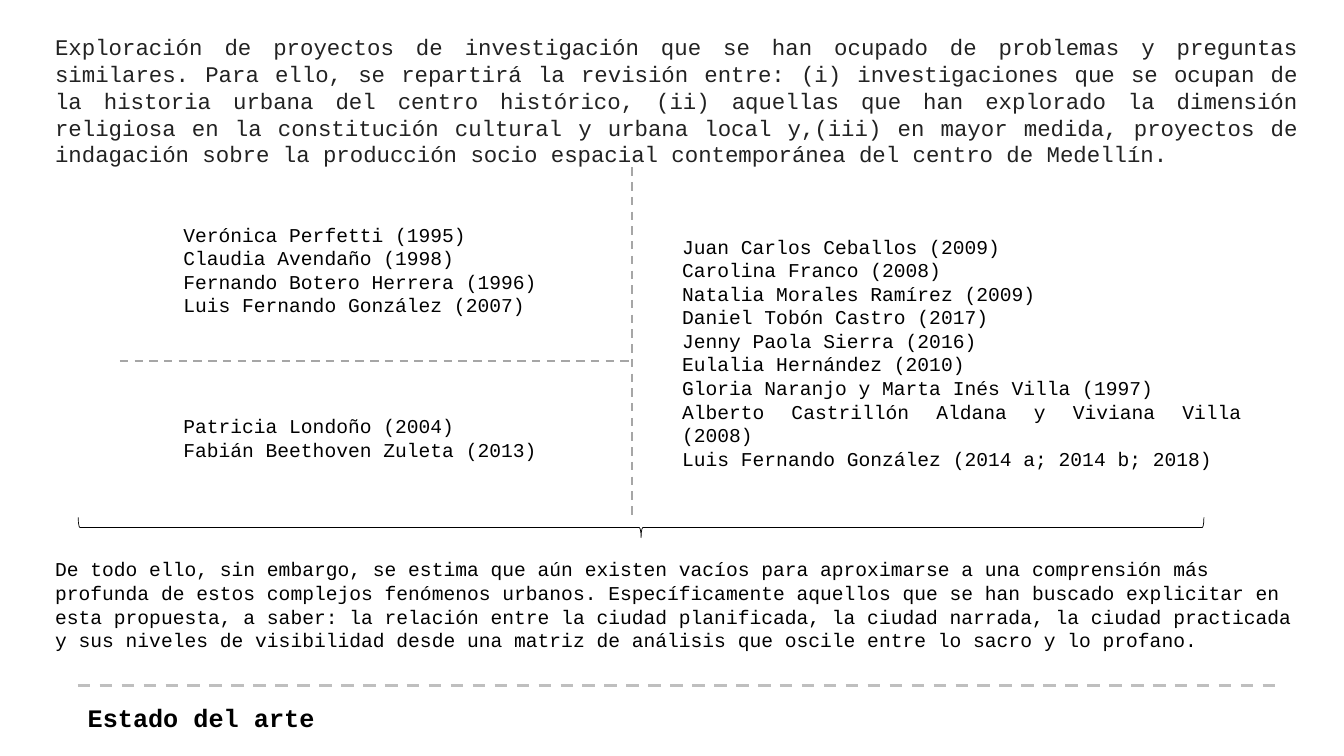
from dataclasses import dataclass

from lxml.etree import SubElement
from pptx import Presentation
from pptx.dml.color import RGBColor
from pptx.enum.dml import MSO_LINE
from pptx.enum.shapes import MSO_CONNECTOR, MSO_SHAPE
from pptx.enum.text import MSO_AUTO_SIZE, PP_ALIGN
from pptx.oxml.ns import qn
from pptx.util import Cm, Pt


@dataclass(frozen=True)
class Theme:
    font: str = "Courier New"
    black: str = "000000"
    ink: str = "222222"
    divider: str = "A6A6A6"
    footer_rule: str = "BFBFBF"
    title_size: float = 18
    intro_size: float = 16
    body_size: float = 14


@dataclass(frozen=True)
class Box:
    left: float
    top: float
    width: float
    height: float

    def inner(self, left, top, width, height):
        return Box(self.left + left, self.top + top, width, height)

    def lengths(self):
        return [Cm(value) for value in (self.left, self.top, self.width, self.height)]


THEME = Theme()

INTRO = (
    "Exploración de proyectos de investigación que se han ocupado de problemas y preguntas "
    "similares. Para ello, se repartirá la revisión entre: (i) investigaciones que se ocupan de "
    "la historia urbana del centro histórico, (ii) aquellas que han explorado la dimensión "
    "religiosa en la constitución cultural y urbana local y,(iii) en mayor medida, proyectos de "
    "indagación sobre la producción socio espacial contemporánea del centro de Medellín."
)
URBAN_HISTORY = [
    "Verónica Perfetti (1995)",
    "Claudia Avendaño (1998)",
    "Fernando Botero Herrera (1996)",
    "Luis Fernando González (2007)",
]
RELIGION = ["Patricia Londoño (2004)", "Fabián Beethoven Zuleta (2013)"]
SPATIAL_PRODUCTION = [
    "Juan Carlos Ceballos (2009)",
    "Carolina Franco (2008)",
    "Natalia Morales Ramírez (2009)",
    "Daniel Tobón Castro (2017)",
    "Jenny Paola Sierra (2016)",
    "Eulalia Hernández (2010)",
    "Gloria Naranjo y Marta Inés Villa (1997)",
    "Alberto Castrillón Aldana y Viviana Villa (2008)",
    "Luis Fernando González (2014 a; 2014 b; 2018)",
]
CONCLUSION = (
    "De todo ello, sin embargo, se estima que aún existen vacíos para aproximarse a una "
    "comprensión más profunda de estos complejos fenómenos urbanos. Específicamente aquellos que "
    "se han buscado explicitar en esta propuesta, a saber: la relación entre la ciudad "
    "planificada, la ciudad narrada, la ciudad practicada y sus niveles de visibilidad desde una "
    "matriz de análisis que oscile entre lo sacro y lo profano."
)


def add_text(page, box, lines, size=THEME.body_size, color=THEME.black,
             bold=False, align=PP_ALIGN.JUSTIFY):
    frame = page.shapes.add_textbox(*box.lengths()).text_frame
    frame.word_wrap = True
    frame.auto_size = MSO_AUTO_SIZE.SHAPE_TO_FIT_TEXT
    font_format = {"name": THEME.font, "size": Pt(size), "bold": bold}
    for index, line in enumerate(lines):
        para = frame.paragraphs[0] if index == 0 else frame.add_paragraph()
        para.alignment = align
        span = para.add_run()
        span.text = line
        for name, value in font_format.items():
            setattr(span.font, name, value)
        span.font.color.rgb = RGBColor.from_string(color)


def add_dashed_line(page, box, color, weight):
    left, top, width, height = box.lengths()
    rule = page.shapes.add_connector(
        MSO_CONNECTOR.STRAIGHT, left, top, left + width, top + height)
    line_format = {"width": Pt(weight), "dash_style": MSO_LINE.DASH}
    for name, value in line_format.items():
        setattr(rule.line, name, value)
    rule.line.color.rgb = RGBColor.from_string(color)
    SubElement(rule._element.spPr, qn("a:effectLst"))


def add_authors(page, box):
    middle = 12.91
    add_dashed_line(page, box.inner(0, 4.87, middle, 0), THEME.divider, 1.5)
    add_dashed_line(page, box.inner(middle, 0, 0, box.height), THEME.divider, 1.5)
    add_text(page, box.inner(1.35, 1.27, 9.47, 2.64), URBAN_HISTORY)
    add_text(page, box.inner(1.35, 6.09, 9.91, 1.45), RELIGION)
    add_text(page, box.inner(middle + 1.01, 1.57, 14.61, 5.64), SPATIAL_PRODUCTION)


def add_brace(page, box):
    upright = box.inner((box.width - box.height) / 2, (box.height - box.width) / 2,
                        box.height, box.width)
    brace = page.shapes.add_shape(MSO_SHAPE.RIGHT_BRACE, *upright.lengths())
    brace.rotation = 90
    brace.shadow.inherit = False
    brace.fill.background()
    brace.line.width = Pt(0.5)
    brace.line.color.rgb = RGBColor.from_string(THEME.black)


def add_footer(page, box):
    add_dashed_line(page, box.inner(0, 0, box.width, 0), THEME.footer_rule, 2.25)
    add_text(page, box.inner(0, 0.31, 19.63, 1.02), ["Estado del arte"],
             size=THEME.title_size, bold=True)


def main():
    deck = Presentation()
    deck.slide_width, deck.slide_height = Cm(33.87), Cm(19.05)
    page = deck.slides.add_slide(deck.slide_layouts[6])
    add_footer(page, Box(1.96, 17.27, 30.17, 1.33))
    add_text(page, Box(1.14, 0.71, 31.83, 3.68), [INTRO],
             size=THEME.intro_size, color=THEME.ink)
    add_authors(page, Box(3.02, 4.22, 28.53, 8.76))
    add_text(page, Box(1.14, 13.92, 31.83, 2.64), [CONCLUSION], align=PP_ALIGN.LEFT)
    add_brace(page, Box(1.97, 13.04, 28.37, 0.51))
    deck.save("out.pptx")


if __name__ == "__main__":
    main()
